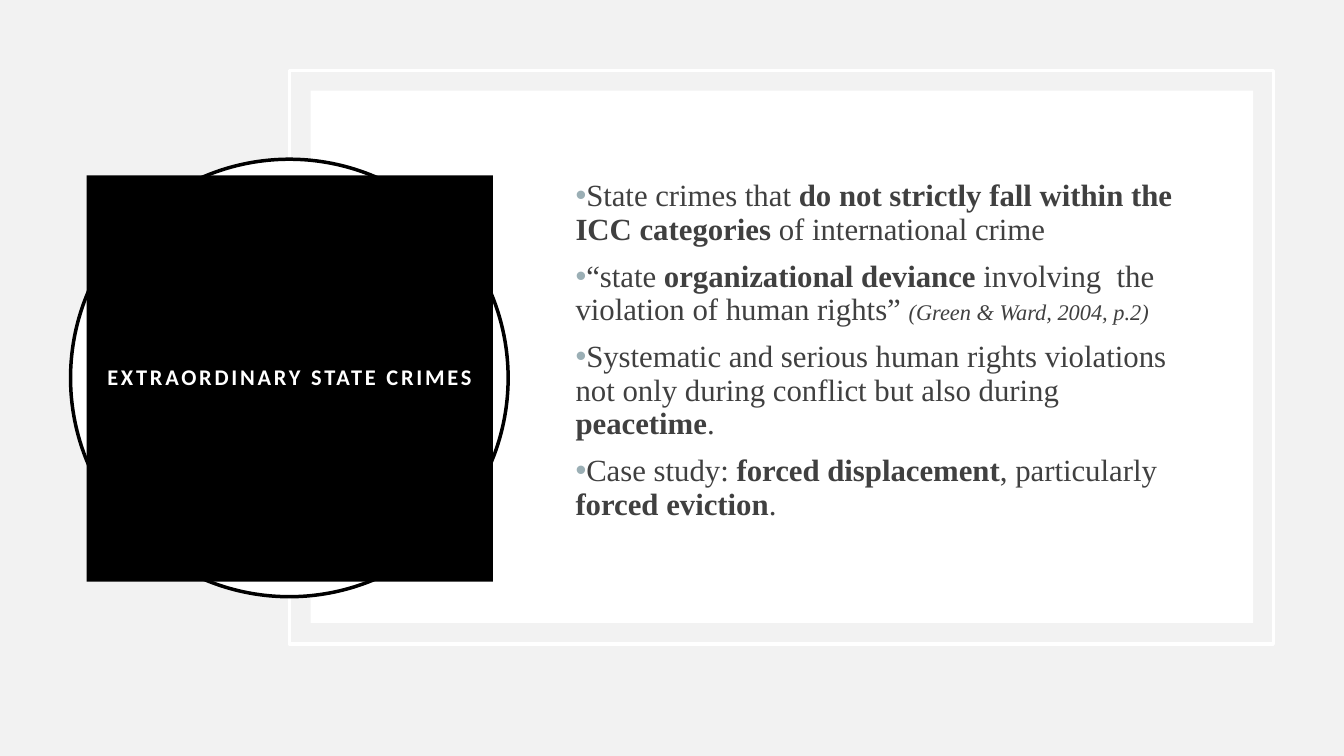
from lxml import etree
from pptx import Presentation
from pptx.dml.color import RGBColor
from pptx.enum.shapes import MSO_SHAPE
from pptx.enum.text import MSO_ANCHOR, PP_ALIGN
from pptx.oxml.ns import qn
from pptx.util import Inches, Pt

RECT, OVAL = MSO_SHAPE.RECTANGLE, MSO_SHAPE.OVAL
TOP, MIDDLE = MSO_ANCHOR.TOP, MSO_ANCHOR.MIDDLE
CENTER = PP_ALIGN.CENTER
WHITE, BLACK, PALE = "FFFFFF", "000000", "F2F2F2"
GRAY, TEAL = "404040", "9BAFB5"
SERIF, SANS = "Times New Roman", "Calibri"

# Each run: text, style ("" plain, "b" bold, "i" small italic citation)
POINTS = [
    [("State crimes that ", ""),
     ("do not strictly fall within the ICC categories ", "b"),
     ("of international crime", "")],
    [("“state ", ""),
     ("organizational deviance ", "b"),
     ("involving  the violation of human rights” ", ""),
     ("(Green & Ward, 2004, p.2)", "i")],
    [("Systematic and serious human rights violations not only during "
      "conflict but also during ", ""),
     ("peacetime", "b"),
     (".", "")],
    [("Case study: ", ""),
     ("forced displacement", "b"),
     (", particularly ", ""),
     ("forced eviction", "b"),
     (".", "")],
]


def color(value):
    return RGBColor.from_string(value)


def add_panel(slide, kind, box, fill=None, line=None):
    panel = slide.shapes.add_shape(kind, *map(Inches, box))
    panel.shadow.inherit = False
    if fill:
        panel.fill.solid()
        panel.fill.fore_color.rgb = color(fill)
    else:
        panel.fill.background()
    if line:
        panel.line.color.rgb = color(line)
        panel.line.width = Pt(2.5)
    else:
        panel.line.fill.background()
    return panel


def add_run(para, text, font, size, tint, bold=False, italic=False):
    run = para.add_run()
    run.text = text
    run.font.name = font
    run.font.size = Pt(size)
    run.font.color.rgb = color(tint)
    run.font.bold = bold
    run.font.italic = italic
    return run


def add_bullet(para):
    props = para._p.get_or_add_pPr()
    props.set("marL", "0")
    props.set("indent", str(-Inches(0.25)))
    tint = etree.SubElement(props, qn("a:buClr"))
    etree.SubElement(tint, qn("a:srgbClr"), val=TEAL)
    etree.SubElement(props, qn("a:buFont"), typeface="Arial")
    etree.SubElement(props, qn("a:buChar"), char="•")


def add_title(panel, text):
    frame = panel.text_frame
    frame.word_wrap = False
    frame.vertical_anchor = MIDDLE
    para = frame.paragraphs[0]
    para.alignment = CENTER
    para.line_spacing = 0.9
    run = add_run(para, text, SANS, 16, WHITE, bold=True)
    run.font._element.set("spc", "200")


def add_points(slide, box, points):
    frame = slide.shapes.add_textbox(*map(Inches, box)).text_frame
    frame.word_wrap = True
    frame.vertical_anchor = TOP
    for i, runs in enumerate(points):
        para = frame.add_paragraph() if i else frame.paragraphs[0]
        add_bullet(para)
        para.line_spacing = 0.9
        para.space_before = Pt(10 if i else 0)
        for text, style in runs:
            add_run(para, text, SERIF, 16 if style == "i" else 22, GRAY,
                    style == "b", style == "i")


def main():
    deck = Presentation()
    deck.slide_width, deck.slide_height = Inches(13.33), Inches(7.5)
    slide = deck.slides.add_slide(deck.slide_layouts[6])
    slide.background.fill.solid()
    slide.background.fill.fore_color.rgb = color(PALE)

    add_panel(slide, RECT, (2.87, 0.7, 9.76, 5.69), line=WHITE)
    add_panel(slide, RECT, (3.08, 0.9, 9.35, 5.28), fill=WHITE)
    add_panel(slide, OVAL, (0.7, 1.58, 4.34, 4.34), WHITE, BLACK)
    block = add_panel(slide, RECT, (0.86, 1.74, 4.03, 4.03), BLACK)
    add_title(block, "EXTRAORDINARY STATE CRIMES")
    add_points(slide, (5.61, 1.74, 6.25, 4.28), POINTS)
    deck.save("out.pptx")


if __name__ == "__main__":
    main()
